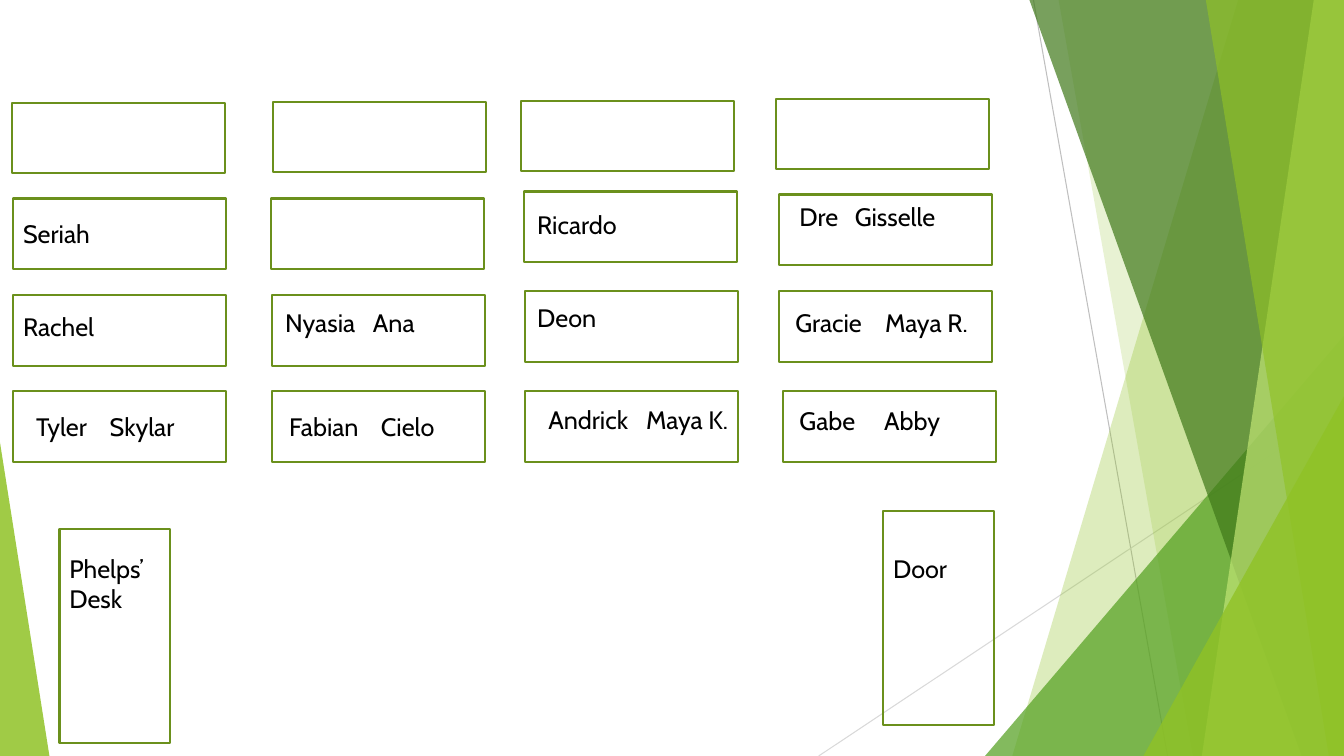
from dataclasses import dataclass

from lxml import etree
from pptx import Presentation
from pptx.dml.color import RGBColor
from pptx.enum.shapes import MSO_CONNECTOR, MSO_SHAPE
from pptx.enum.text import MSO_AUTO_SIZE
from pptx.oxml.ns import qn
from pptx.util import Inches, Pt

RECT = MSO_SHAPE.RECTANGLE
TRIANGLE = MSO_SHAPE.RIGHT_TRIANGLE
CORNER = MSO_SHAPE.ISOSCELES_TRIANGLE
STRAIGHT = MSO_CONNECTOR.STRAIGHT
GROW = MSO_AUTO_SIZE.SHAPE_TO_FIT_TEXT

BLACK = RGBColor(0x00, 0x00, 0x00)
OUTLINE = RGBColor(0x6B, 0x90, 0x1C)
LIME = RGBColor(0x90, 0xC2, 0x26)
PALE_LIME = RGBColor(0xC0, 0xE4, 0x74)
GREEN = RGBColor(0x54, 0xA0, 0x21)
DARK_GREEN = RGBColor(0x3F, 0x78, 0x19)
GRAY = RGBColor(0xBF, 0xBF, 0xBF)
LIGHT_GRAY = RGBColor(0xD9, 0xD9, 0xD9)

SLIDE_W, SLIDE_H = 13.33, 7.5
DESK_SIZE = (2.11, 0.7)
TALL_SIZE = (1.1, 2.12)
FONT = {"name": "Cabin", "size": Pt(18)}


@dataclass
class Ray:
    start: tuple[float, float]
    end: tuple[float, float]
    color: RGBColor


@dataclass
class Band:
    top_x: float
    bottom_x: float
    color: RGBColor
    opacity: int


@dataclass
class Corner:
    left: float
    top: float
    width: float
    apex: float
    color: RGBColor
    opacity: int


@dataclass
class Label:
    text: str
    left: float
    top: float
    width: float = 1.98
    height: float = 0.4
    tab: float = 0


RAYS = [
    Ray((10.25, 0), (11.58, SLIDE_H), GRAY),
    Ray((SLIDE_W, 4.03), (8.12, SLIDE_H), LIGHT_GRAY),
]
FACETS = [
    Band(12.28, 10.04, LIME, 30),
    Band(10.5, 11.83, LIME, 20),
    Corner(9.77, 3.33, 3.56, 1, GREEN, 72),
    Band(10.21, 12.91, DARK_GREEN, 70),
    Band(13.03, 11.92, PALE_LIME, 70),
    Band(11.96, 13.18, LIME, 65),
    Corner(11.34, 3.93, 1.99, 1, LIME, 80),
    Corner(0, 4.39, 0.49, 0, LIME, 85),
]
DESK_ROWS = [
    [(0.12, 1.02), (2.71, 1.01), (5.17, 1), (7.7, 0.98)],
    [(0.13, 1.97), (2.69, 1.97), (5.2, 1.9), (7.73, 1.93)],
    [(0.13, 2.93), (2.7, 2.93), (5.21, 2.89), (7.73, 2.89)],
    [(0.13, 3.88), (2.7, 3.88), (5.21, 3.88), (7.77, 3.88)],
]
TALL_BOXES = [(0.59, 5.25), (8.76, 5.07)]
LABELS = [
    Label("Seriah", 0.13, 2.12),
    Label("Ricardo", 5.23, 2.03),
    Label("Dre\tGisselle", 7.83, 1.95, tab=0.55),
    Label("Rachel", 0.13, 3.04),
    Label("Nyasia\tAna", 2.73, 3, 2.18, tab=0.87),
    Label("Deon", 5.23, 2.95),
    Label("Gracie\tMaya R.", 7.79, 3, 2.5, tab=0.89),
    Label("Tyler\tSkylar", 0.26, 4.03, tab=0.73),
    Label("Fabian\tCielo", 2.77, 4.03, tab=0.91),
    Label("Andrick\tMaya K.", 5.34, 3.96, 2.24, tab=0.97),
    Label("Gabe\tAbby", 7.83, 3.97, 2.26, tab=0.84),
    Label("Phelps’ Desk", 0.59, 5.44, 1.1, 0.71),
    Label("Door", 8.76, 5.44, 1.1),
]


def add_ray(s, ray: Ray) -> None:
    line = s.shapes.add_connector(STRAIGHT, *map(Inches, ray.start + ray.end))
    line.line.color.rgb = ray.color
    line.line.width = Pt(0.75)
    etree.SubElement(line._element.spPr, qn("a:effectLst"))


def add_facet(s, facet: Band | Corner) -> None:
    if isinstance(facet, Band):
        points = [(SLIDE_W, 0), (SLIDE_W, SLIDE_H), (facet.bottom_x, SLIDE_H)]
        builder = s.shapes.build_freeform(Inches(facet.top_x), 0)
        builder.add_line_segments([(Inches(x), Inches(y)) for x, y in points])
        sp = builder.convert_to_shape()
    else:
        box = (facet.left, facet.top, facet.width, SLIDE_H - facet.top)
        sp = s.shapes.add_shape(CORNER, *map(Inches, box))
        sp.adjustments[0] = facet.apex
    sp.shadow.inherit = False
    sp.line.fill.background()
    sp.fill.solid()
    sp.fill.fore_color.rgb = facet.color
    color = sp._element.spPr.find(qn("a:solidFill"))[0]
    etree.SubElement(color, qn("a:alpha"), val=str(facet.opacity * 1000))


def add_box(s, place: tuple[float, float], size: tuple[float, float]) -> None:
    sp = s.shapes.add_shape(RECT, *map(Inches, place + size))
    sp.shadow.inherit = False
    sp.fill.background()
    sp.line.color.rgb = OUTLINE
    sp.line.width = Pt(1.5)


def add_label(s, label: Label) -> None:
    box = (label.left, label.top, label.width, label.height)
    tf = s.shapes.add_textbox(*map(Inches, box)).text_frame
    tf.word_wrap = True
    tf.auto_size = GROW
    p = tf.paragraphs[0]
    r = p.add_run()
    r.text = label.text
    for name, value in FONT.items():
        setattr(r.font, name, value)
    r.font.color.rgb = BLACK
    if label.tab:
        tabs = etree.SubElement(p._p.get_or_add_pPr(), qn("a:tabLst"))
        etree.SubElement(tabs, qn("a:tab"), pos=str(Inches(label.tab)), algn="l")


def main() -> None:
    prs = Presentation()
    prs.slide_width, prs.slide_height = Inches(SLIDE_W), Inches(SLIDE_H)
    s = prs.slides.add_slide(prs.slide_layouts[6])
    for ray in RAYS:
        add_ray(s, ray)
    for facet in FACETS:
        add_facet(s, facet)
    for row in DESK_ROWS:
        for place in row:
            add_box(s, place, DESK_SIZE)
    for place in TALL_BOXES:
        add_box(s, place, TALL_SIZE)
    for label in LABELS:
        add_label(s, label)
    prs.save("out.pptx")


if __name__ == "__main__":
    main()
